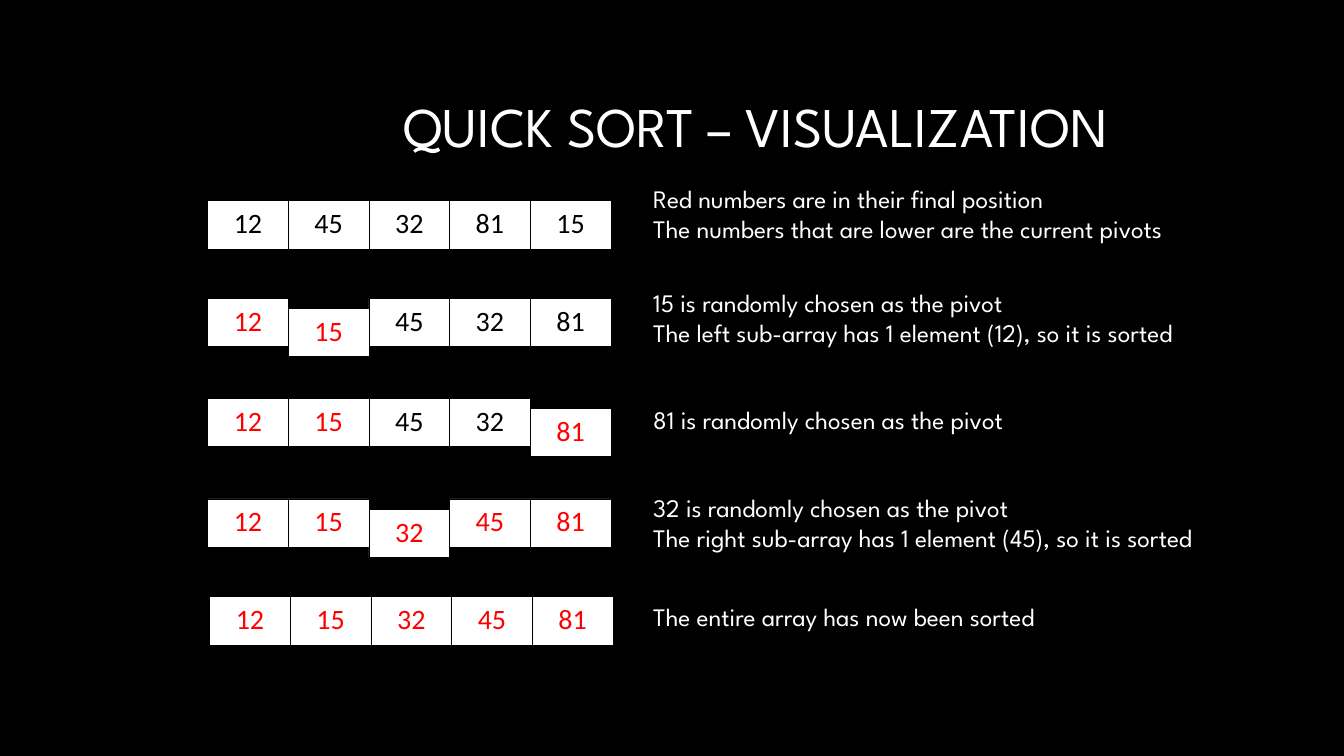
"""Build the quick sort visualization slide."""
from pptx import Presentation
from pptx.dml.color import RGBColor
from pptx.enum.shapes import MSO_SHAPE
from pptx.enum.text import MSO_ANCHOR, MSO_AUTO_SIZE, PP_ALIGN
from pptx.util import Inches, Pt

RECT = MSO_SHAPE.RECTANGLE
TOP, MIDDLE = MSO_ANCHOR.TOP, MSO_ANCHOR.MIDDLE
LEFT, CENTER, RIGHT = PP_ALIGN.LEFT, PP_ALIGN.CENTER, PP_ALIGN.RIGHT
GROW = MSO_AUTO_SIZE.SHAPE_TO_FIT_TEXT

COLORS = {"black": "000000", "white": "FFFFFF", "red": "FF0000"}
FORMATS = {
    "title": {"size": Pt(40), "name": "League Spartan"},
    "note": {"size": Pt(18), "name": "League Spartan"},
    "number": {"size": Pt(20), "name": "Calibri"},
}
CELL_W, CELL_H, PIVOT_DROP = 0.8, 0.48, 0.1
NOTE_LEFT = 6.38

# left, top, numbers, numbers in final position, pivot
STEPS = [
    (2.06, 1.99, [12, 45, 32, 81, 15], [], None),
    (2.06, 2.96, [12, 15, 45, 32, 81], [12, 15], 15),
    (2.06, 3.95, [12, 15, 45, 32, 81], [12, 15, 81], 81),
    (2.06, 4.95, [12, 15, 32, 45, 81], [12, 15, 32, 45, 81], 32),
    (2.08, 5.92, [12, 15, 32, 45, 81], [12, 15, 32, 45, 81], None),
]
# top, width, height, lines
NOTES = [
    (1.77, 6.5, 0.71, ["Red numbers are in their final position",
                       "The numbers that are lower are the current pivots"]),
    (2.8, 6.95, 0.71, ["15 is randomly chosen as the pivot",
                       "The left sub-array has 1 element (12), so it is sorted"]),
    (3.96, 6.95, 0.4, ["81 is randomly chosen as the pivot"]),
    (4.83, 6.95, 0.71, ["32 is randomly chosen as the pivot",
                        "The right sub-array has 1 element (45), so it is sorted"]),
    (5.92, 6.95, 0.4, ["The entire array has now been sorted"]),
]


def rgb(color):
    return RGBColor.from_string(COLORS[color])


def write(tf, lines, style, color, align=LEFT, anchor=TOP):
    tf.word_wrap = True
    tf.vertical_anchor = anchor
    for i, line in enumerate(lines):
        p = tf.paragraphs[0] if i == 0 else tf.add_paragraph()
        p.alignment = align
        r = p.add_run()
        r.text = line
        for key, value in FORMATS[style].items():
            setattr(r.font, key, value)
        r.font.color.rgb = rgb(color)


def add_text(s, box, lines, style, **layout):
    tf = s.shapes.add_textbox(*map(Inches, box)).text_frame
    write(tf, lines, style, "white", **layout)
    return tf


def add_cell(s, left, top, number, color):
    sp = s.shapes.add_shape(RECT, Inches(left), Inches(top), Inches(CELL_W), Inches(CELL_H))
    sp.shadow.inherit = False
    sp.fill.solid()
    sp.fill.fore_color.rgb = rgb("white")
    sp.line.color.rgb = rgb("black")
    sp.line.width = Pt(0.5)
    write(sp.text_frame, [str(number)], "number", color, align=CENTER)


def add_step(s, left, top, numbers, final, pivot):
    for i, number in enumerate(numbers):
        drop = PIVOT_DROP if number == pivot else 0
        color = "red" if number in final else "black"
        add_cell(s, left + i * CELL_W, top + drop, number, color)


def main():
    prs = Presentation()
    prs.slide_width, prs.slide_height = Inches(13.33), Inches(7.5)
    s = prs.slides.add_slide(prs.slide_layouts[6])
    s.background.fill.solid()
    s.background.fill.fore_color.rgb = rgb("black")

    title = add_text(s, (1.67, 0.58, 9.42, 1.41), ["QUICK SORT – VISUALIZATION"],
                     "title", align=RIGHT, anchor=MIDDLE)
    title.paragraphs[0].line_spacing = 0.9
    for step in STEPS:
        add_step(s, *step)
    for top, width, height, lines in NOTES:
        add_text(s, (NOTE_LEFT, top, width, height), lines, "note").auto_size = GROW
    prs.save("out.pptx")


if __name__ == "__main__":
    main()
